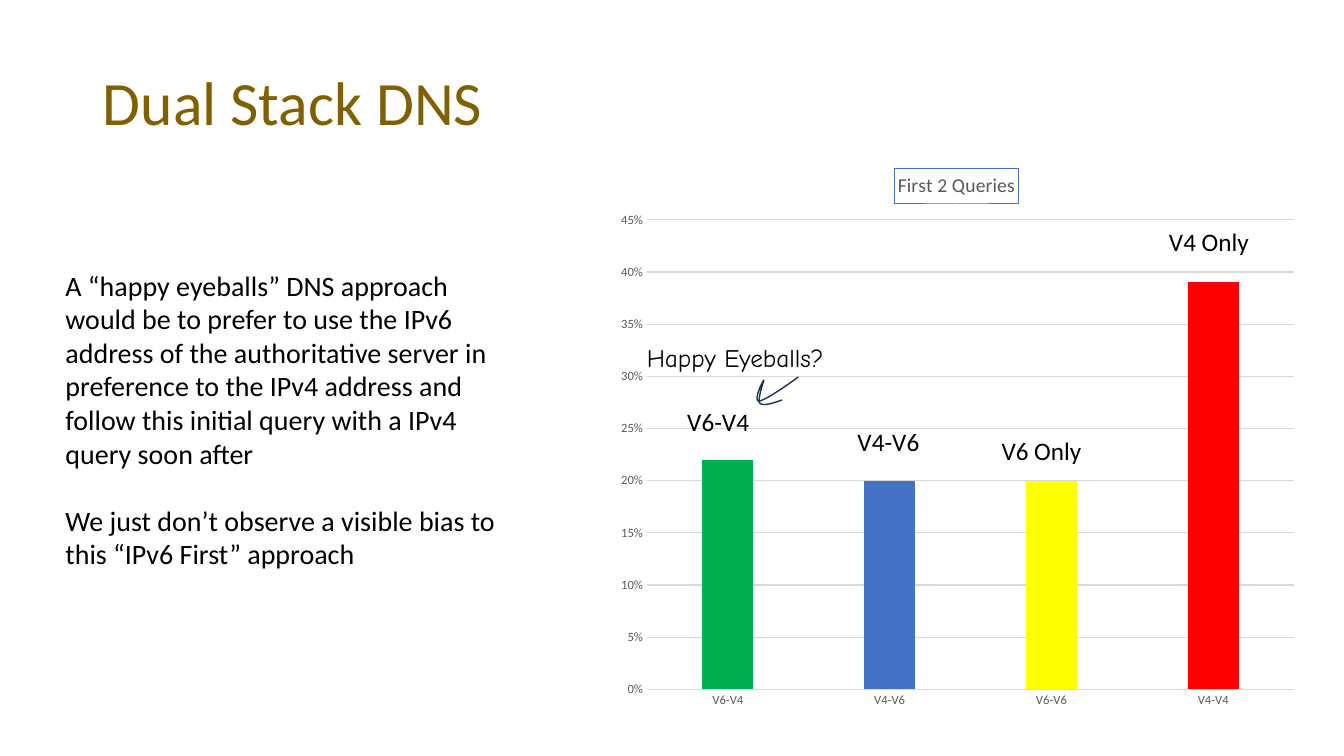
from dataclasses import dataclass

from lxml import etree
from pptx import Presentation
from pptx import util as u
from pptx.chart import data as chart_data
from pptx.dml import color
from pptx.enum import chart as chart_enum
from pptx.enum import text as text_enum
from pptx.oxml import ns


@dataclass(frozen=True)
class Theme:
    font: str = "Calibri"
    hand_font: str = "Comic Neue"
    ink: str = "000000"
    title: str = "806000"
    muted: str = "595959"
    grid: str = "D9D9D9"
    arrow: str = "1E3256"
    green: str = "00B050"
    blue: str = "4472C4"
    yellow: str = "FFFF00"
    red: str = "FF0000"
    title_size: int = 44
    body_size: int = 20
    label_size: int = 18
    chart_title_size: int = 14
    axis_size: int = 9


THEME = Theme()

BODY = [
    "A “happy eyeballs” DNS approach would be to prefer to use the IPv6 address "
    "of the authoritative server in preference to the IPv4 address and follow "
    "this initial query with a IPv4 query soon after",
    "We just don’t observe a visible bias to this “IPv6 First” approach",
]

# Category, share of queries, bar colour
BARS = [
    ("V6-V4", 0.22, THEME.green),
    ("V4-V6", 0.20, THEME.blue),
    ("V6-V6", 0.20, THEME.yellow),
    ("V4-V4", 0.39, THEME.red),
]

# Text, left, top, width in cm, font
LABELS = [
    ("Happy Eyeballs?", 16.05, 8.51, 5.49, THEME.hand_font),
    ("V4 Only", 29.21, 5.59, 2.54, THEME.font),
    ("V6 Only", 24.99, 10.85, 2.54, THEME.font),
    ("V4-V6", 21.36, 10.62, 2.08, THEME.font),
    ("V6-V4", 17.07, 10.11, 2.08, THEME.font),
]

# Hand-drawn arrow in cm: a start, then two controls and an end per curve
ARROW_START = (20.12, 9.5)
ARROW_CURVES = [
    ((19.71, 9.8), (19.28, 10.08), (19.13, 10.11)),
    ((18.97, 10.11), (19.23, 9.58), (19.25, 9.58)),
    ((19.25, 9.6), (19.08, 10.08), (19.15, 10.16)),
    ((19.23, 10.24), (19.48, 10.16), (19.71, 10.08)),
]
CURVE_STEPS = 12


def rgb(value):
    return color.RGBColor.from_string(value)


def style_font(font, size, tint, name=THEME.font):
    font.name = name
    font.size = u.Pt(size)
    font.bold = False
    font.color.rgb = rgb(tint)


def style_line(line, tint, width=0.75):
    line.color.rgb = rgb(tint)
    line.width = u.Pt(width)


def write_text(frame, paragraphs, size, tint=THEME.ink, font=THEME.font,
               spacing=1.0, gap=0):
    for index, content in enumerate(paragraphs):
        para = frame.add_paragraph() if index else frame.paragraphs[0]
        para.alignment = text_enum.PP_ALIGN.LEFT
        para.line_spacing = spacing
        para.space_before = u.Pt(gap if index else 0)
        span = para.add_run()
        span.text = content
        style_font(span.font, size, tint, font)


def add_title(page, content):
    title = page.shapes.title
    title.left, title.top = u.Cm(2.34), u.Cm(0.81)
    title.width, title.height = u.Cm(29.21), u.Cm(3.68)
    title.text_frame.vertical_anchor = text_enum.MSO_ANCHOR.MIDDLE
    write_text(title.text_frame, [content], THEME.title_size,
               tint=THEME.title, spacing=0.9)


def add_text(page, paragraphs, left, top, width, height, wrap=True, **style):
    box = page.shapes.add_textbox(u.Cm(left), u.Cm(top), u.Cm(width), u.Cm(height))
    frame = box.text_frame
    frame.word_wrap = wrap
    frame.auto_size = text_enum.MSO_AUTO_SIZE.SHAPE_TO_FIT_TEXT
    write_text(frame, paragraphs, **style)


def place_plot(chart, **fractions):
    """Fix the inner plot area as fractions of the chart."""
    plot_area = chart.plots[0]._element.getparent()
    layout = plot_area.find(ns.qn("c:layout"))
    if layout is None:
        layout = etree.Element(ns.qn("c:layout"))
        plot_area.insert(0, layout)
    manual = etree.SubElement(layout, ns.qn("c:manualLayout"))
    settings = {"layoutTarget": "inner", "xMode": "edge", "yMode": "edge", **fractions}
    for name, value in settings.items():
        etree.SubElement(manual, ns.qn(f"c:{name}")).set("val", str(value))


def add_bar_chart(page, heading):
    values = chart_data.CategoryChartData(number_format="0%")
    values.categories = [name for name, _, _ in BARS]
    values.add_series("Series 1", [share for _, share, _ in BARS])
    chart = page.shapes.add_chart(
        chart_enum.XL_CHART_TYPE.COLUMN_CLUSTERED,
        u.Cm(15.24), u.Cm(3.81), u.Cm(17.73), u.Cm(14.43), values).chart
    style_font(chart.font, 10, THEME.ink)
    chart.has_legend = False

    # Boxed heading
    chart.has_title = True
    write_text(chart.chart_title.text_frame, [heading],
               THEME.chart_title_size, tint=THEME.muted)
    style_line(chart.chart_title.format.line, THEME.blue)
    chart.chart_title.include_in_layout = False

    # Bars
    plot = chart.plots[0]
    plot.gap_width, plot.overlap, plot.vary_by_categories = 219, -27, False
    series = plot.series[0]
    series.format.fill.solid()
    series.format.fill.fore_color.rgb = rgb(THEME.blue)
    for index, (_, _, tint) in enumerate(BARS):
        if tint != THEME.blue:
            fill = series.points[index].format.fill
            fill.solid()
            fill.fore_color.rgb = rgb(tint)

    # Axes
    for axis in (chart.category_axis, chart.value_axis):
        axis.major_tick_mark = axis.minor_tick_mark = chart_enum.XL_TICK_MARK.NONE
        style_font(axis.tick_labels.font, THEME.axis_size, THEME.muted)
    style_line(chart.category_axis.format.line, THEME.grid)
    scale = chart.value_axis
    scale.minimum_scale, scale.maximum_scale, scale.major_unit = 0, 0.45, 0.05
    scale.tick_labels.number_format = "0%"
    scale.tick_labels.number_format_is_linked = False
    scale.format.line.fill.background()
    style_line(scale.major_gridlines.format.line, THEME.grid)
    place_plot(chart, x=0.06, y=0.12, w=0.92, h=0.82)


def curve_points(start, first, second, end):
    """Sample a cubic curve, leaving out its start."""
    for step in range(1, CURVE_STEPS + 1):
        t = step / CURVE_STEPS
        weights = ((1 - t) ** 3, 3 * t * (1 - t) ** 2, 3 * t * t * (1 - t), t ** 3)
        yield tuple(
            u.Cm(sum(weight * value for weight, value in zip(weights, axis)))
            for axis in zip(start, first, second, end))


def add_sketched_arrow(page):
    builder = page.shapes.build_freeform(*map(u.Cm, ARROW_START))
    start = ARROW_START
    for curve in ARROW_CURVES:
        builder.add_line_segments(curve_points(start, *curve), close=False)
        start = curve[-1]
    arrow = builder.convert_to_shape()
    arrow.shadow.inherit = False
    arrow.fill.background()
    style_line(arrow.line, THEME.arrow, 1)


def main():
    deck = Presentation()
    deck.slide_width, deck.slide_height = u.Cm(33.87), u.Cm(19.05)
    page = deck.slides.add_slide(deck.slide_layouts.get_by_name("Title Only"))

    add_title(page, "Dual Stack DNS")
    add_text(page, BODY, 1.4, 6.63, 11.96, 10.52, size=THEME.body_size, gap=24)
    add_bar_chart(page, "First 2 Queries")
    for label, left, top, width, font in LABELS:
        add_text(page, [label], left, top, width, 1.02, wrap=False,
                 size=THEME.label_size, font=font)
    add_sketched_arrow(page)

    deck.save("out.pptx")


if __name__ == "__main__":
    main()
